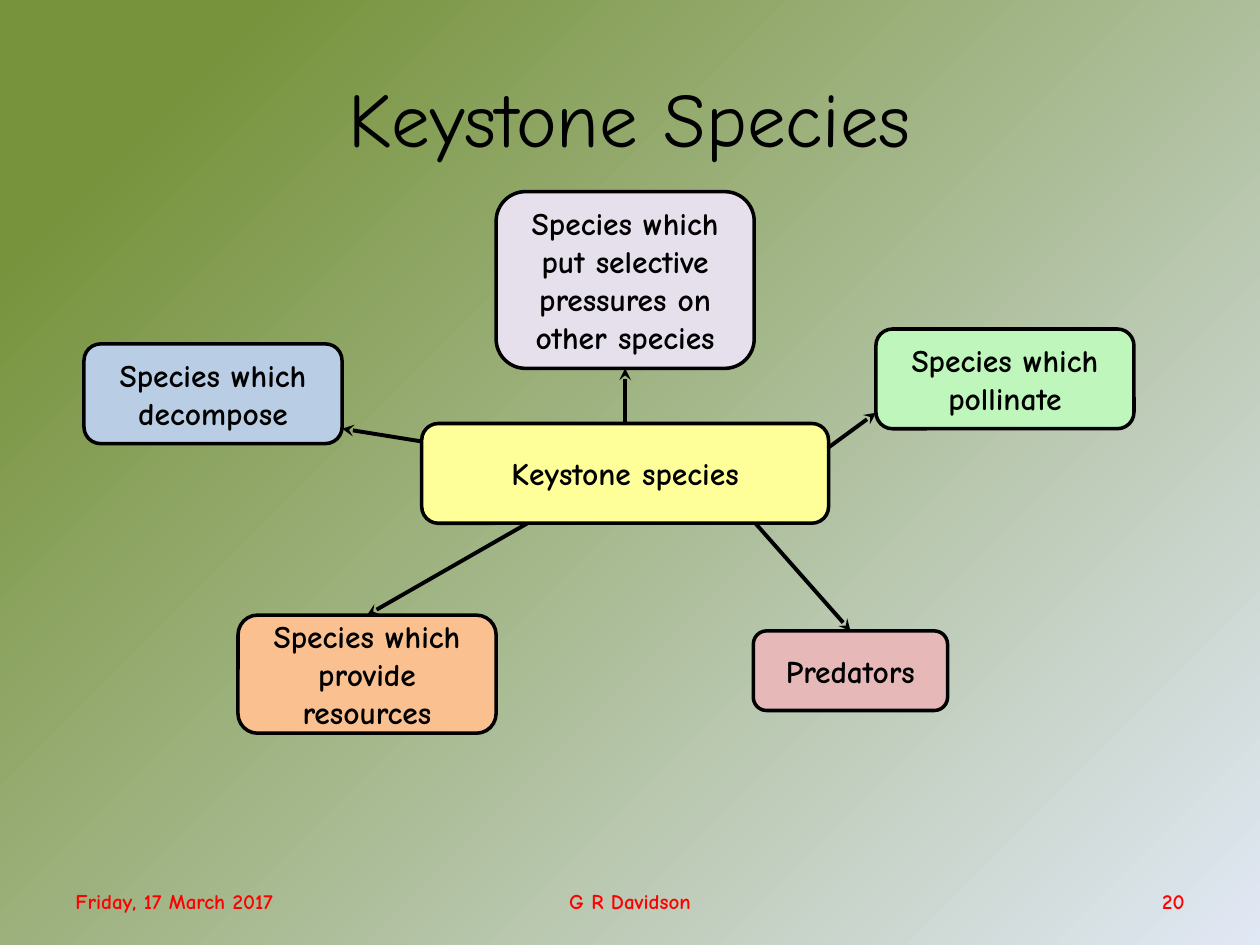
from lxml.etree import SubElement
from pptx import Presentation
from pptx.dml.color import RGBColor
from pptx.enum.shapes import MSO_CONNECTOR, MSO_SHAPE
from pptx.enum.text import MSO_ANCHOR, PP_ALIGN
from pptx.oxml.ns import qn
from pptx.util import Pt

FONT = "Comic Neue"
BLACK = RGBColor(0x00, 0x00, 0x00)
RED = RGBColor(0xFF, 0x00, 0x00)
OLIVE = RGBColor(0x77, 0x93, 0x3C)
MIST = RGBColor(0xE1, 0xE8, 0xF5)
YELLOW = RGBColor(0xFF, 0xFF, 0x99)
GREEN = RGBColor(0xBF, 0xF6, 0xBC)
BLUE = RGBColor(0xB9, 0xCD, 0xE5)
ORANGE = RGBColor(0xFA, 0xC0, 0x90)
PINK = RGBColor(0xE6, 0xB9, 0xB8)
LILAC = RGBColor(0xE6, 0xE0, 0xEC)

# Hub: text, colour, box relative to the diagram
HUB = ("Keystone species", YELLOW, (193, 132.5, 232.5, 57))

# Spokes: text, colour, box, arrow start on hub, arrow tip on spoke (as fractions)
SPOKES = [
    ("Species which pollinate", GREEN, (452.5, 78.5, 147.5, 57), (1, 0.24), (0, 0.84)),
    ("Species which decompose", BLUE, (0, 87, 147.5, 57), (0, 0.18), (1, 0.85)),
    ("Species which provide resources", ORANGE, (88, 242, 147.5, 67.5), (0.26, 1), (0.5, 0)),
    ("Predators", PINK, (382.5, 251, 111, 45.5), (0.82, 1), (0.5, 0)),
    ("Species which put selective pressures on other species", LILAC,
     (235.5, 0, 147.5, 101), (0.5, 0), (0.5, 1)),
]


def write(shape, text, size, color, bold, align):
    frame = shape.text_frame
    frame.word_wrap = True
    frame.vertical_anchor = MSO_ANCHOR.MIDDLE
    para = frame.paragraphs[0]
    para.alignment = align
    run = para.add_run()
    run.text = text
    font = run.font
    font.name, font.size, font.bold = FONT, Pt(size), bold
    font.color.rgb = color


def add_label(slide, box, text, size, color, bold, align):
    label = slide.shapes.add_textbox(*map(Pt, box))
    write(label, text, size, color, bold, align)


def add_node(slide, box, text, color):
    node = slide.shapes.add_shape(MSO_SHAPE.ROUNDED_RECTANGLE, *map(Pt, box))
    node.shadow.inherit = False
    node.fill.solid()
    node.fill.fore_color.rgb = color
    node.line.color.rgb = BLACK
    node.line.width = Pt(2)
    write(node, text, 18, BLACK, True, PP_ALIGN.CENTER)


def add_arrow(slide, start, tip):
    arrow = slide.shapes.add_connector(MSO_CONNECTOR.STRAIGHT, *map(Pt, start + tip))
    arrow.line.color.rgb = BLACK
    arrow.line.width = Pt(2.25)
    SubElement(arrow.line._get_or_add_ln(), qn("a:tailEnd"), type="stealth")
    SubElement(arrow._element.spPr, qn("a:effectLst"))


def spot(box, part):
    """Point at the given fractions of a box."""
    left, top, width, height = box
    return left + width * part[0], top + height * part[1]


def paint_back(slide):
    fill = slide.background.fill
    fill.gradient()
    fill.gradient_angle = 315
    for stop, color, place in zip(fill.gradient_stops, (OLIVE, MIST), (0.12, 1)):
        stop.color.rgb = color
        stop.position = place


def add_web(slide, left, top):
    def shift(box):
        return (left + box[0], top + box[1]) + box[2:]

    # Arrows lie behind the nodes
    hub = shift(HUB[2])
    for _, _, box, start, tip in SPOKES:
        add_arrow(slide, spot(hub, start), spot(shift(box), tip))
    for text, color, box, *_ in [HUB] + SPOKES:
        add_node(slide, shift(box), text, color)


def add_footer(slide, left, top, width, height):
    parts = [
        ("Friday, 17 March 2017", 0, 239, PP_ALIGN.LEFT),
        ("G R Davidson", (width - 228) / 2, 228, PP_ALIGN.CENTER),
        ("20", width - 168, 168, PP_ALIGN.RIGHT),
    ]
    for text, shift, span, align in parts:
        add_label(slide, (left + shift, top, span, height), text, 12, RED, True, align)


def main():
    deck = Presentation()
    deck.slide_width, deck.slide_height = Pt(720), Pt(540)
    slide = deck.slides.add_slide(deck.slide_layouts[6])
    paint_back(slide)
    # Title
    add_label(slide, (36, 21.5, 648, 90), "Keystone Species", 44, BLACK, False,
              PP_ALIGN.CENTER)
    # Diagram
    add_web(slide, 48, 109.5)
    # Footer
    add_footer(slide, 36, 500.5, 648, 29)
    deck.save("out.pptx")


if __name__ == "__main__":
    main()
